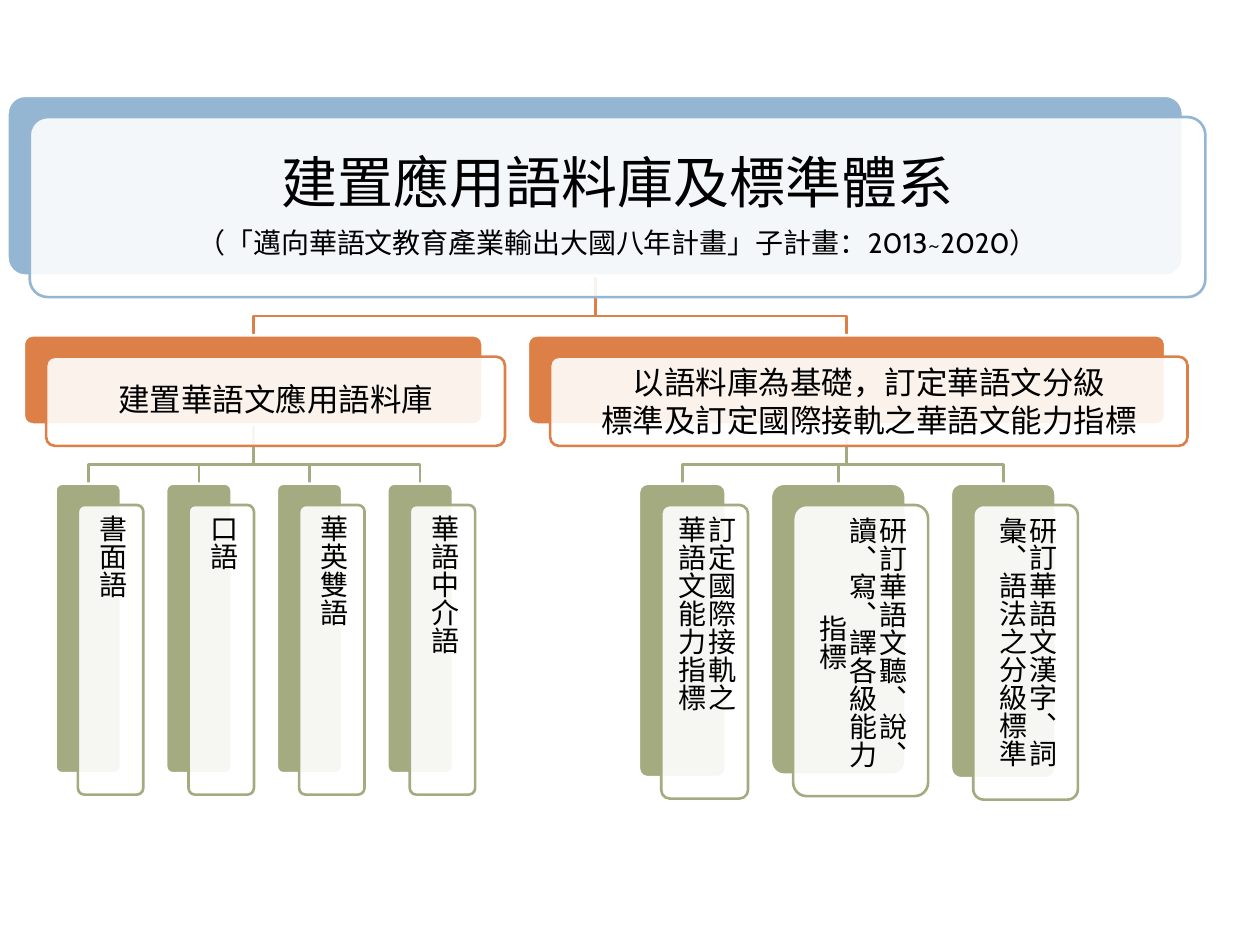
from lxml import etree
from pptx import Presentation
from pptx.dml.color import RGBColor
from pptx.enum.shapes import MSO_SHAPE
from pptx.enum.text import MSO_ANCHOR, MSO_AUTO_SIZE, PP_ALIGN
from pptx.oxml.ns import qn
from pptx.util import Cm, Pt

COLORS = {"plan": "94B6D2", "goal": "DD8047", "task": "A5AB81",
          "paper": "FFFFFF", "ink": "000000"}
SHIFT = (0.45, 0.43)      # front card relative to its backing, cm
GAP = 0.91                # between neighbouring backings, cm
DROP = 0.81               # from parent's edge to the branch line, cm
GOAL_TOP, TASK_TOP = 6.76, 9.75

TITLE = [("建置應用語料庫及標準體系", 32),
         ("（「邁向華語文教育產業輸出大國八年計畫」子計畫：2013~2020）", 16)]
# goal: width, lines, left of first task, tasks (width, height, lines)
GOALS = [
    (9.25, ["建置華語文應用語料庫"], 1.12,
     [(1.32, 5.84, [name]) for name in ("書面語", "口語", "華英雙語", "華語中介語")]),
    (12.85, ["以語料庫為基礎，訂定華語文分級", "標準及訂定國際接軌之華語文能力指標"], 12.88,
     [(1.75, 5.92, ["訂定國際接軌之", "華語文能力指標"]),
      (2.72, 5.87, ["研訂華語文聽、說、讀、寫、譯各級能力指標"]),
      (2.11, 5.94, ["研訂華語文漢字、詞彙、語法之分級標準"])]),
]


def rgb(name):
    return RGBColor.from_string(COLORS[name])


def set_line(sp, color):
    sp.shadow.inherit = False
    sp.line.color.rgb = rgb(color)
    sp.line.width = Pt(1.5)


def write(tf, lines, inset, spacing=0.9, after=0):
    """Fill a text frame with centred (text, size) lines."""
    frame = {"word_wrap": True, "auto_size": MSO_AUTO_SIZE.NONE,
             "vertical_anchor": MSO_ANCHOR.MIDDLE}
    frame.update({f"margin_{side}": Cm(inset)
                  for side in ("left", "top", "right", "bottom")})
    for key, value in frame.items():
        setattr(tf, key, value)
    for i, (text, size) in enumerate(lines):
        p = tf.add_paragraph() if i else tf.paragraphs[0]
        for key, value in {"alignment": PP_ALIGN.CENTER, "line_spacing": spacing,
                           "space_before": Pt(0), "space_after": Pt(after)}.items():
            setattr(p, key, value)
        r = p.add_run()
        r.text = text
        r.font.name, r.font.size = "Cabin", Pt(size)
        r.font.color.rgb = rgb("ink")


def add_card(s, box, color):
    """Draw a coloured backing and a translucent front card; return the front."""
    left, top, width, height = box
    for dx, dy, fill, line in ((0, 0, color, "paper"), (*SHIFT, "paper", color)):
        sp = s.shapes.add_shape(MSO_SHAPE.ROUNDED_RECTANGLE, Cm(left + dx),
                                Cm(top + dy), Cm(width), Cm(height))
        sp.adjustments[0] = 0.1
        sp.fill.solid()
        sp.fill.fore_color.rgb = rgb(fill)
        set_line(sp, line)
    clr = sp.fill._xPr.find(qn("a:solidFill"))[0]
    etree.SubElement(clr, qn("a:alpha")).set("val", "90000")
    return sp


def add_branches(s, parent, children, color):
    """Join the bottom of the parent box to the top of each child box."""
    left, top, width, height = parent
    x, y = left + width / 2, top + height
    for c_left, c_top, c_width, _ in children:
        c_x = c_left + c_width / 2
        fb = s.shapes.build_freeform(Cm(x), Cm(y))
        fb.add_line_segments([(Cm(x), Cm(y + DROP)), (Cm(c_x), Cm(y + DROP)),
                              (Cm(c_x), Cm(c_top))], close=False)
        sp = fb.convert_to_shape()
        sp.fill.background()
        set_line(sp, color)


def row_boxes(left, top, sizes):
    """Boxes side by side for the given (width, height) pairs."""
    boxes = []
    for width, height in sizes:
        boxes.append((left, top, width, height))
        left += width + GAP
    return boxes


def add_plan(s, box):
    front = add_card(s, box, "plan")
    title = s.shapes.title
    for key in ("left", "top", "width", "height"):
        setattr(title, key, getattr(front, key))
    write(title.text_frame, TITLE, 0.46, after=8)
    front._element.addnext(title._element)


def add_goal(s, box, lines, task_left, tasks):
    boxes = row_boxes(task_left, TASK_TOP, [task[:2] for task in tasks])
    add_branches(s, box, boxes, "task")
    front = add_card(s, box, "goal")
    write(front.text_frame, [(t, 18) for t in lines], 0.2,
          spacing=1.0 if len(lines) > 1 else 0.9)
    for task_box, (_, _, words) in zip(boxes, tasks):
        tf = add_card(s, task_box, "task").text_frame
        write(tf, [(t, 16) for t in words], 0.17)
        tf._txBody.bodyPr.set("vert", "eaVert")


def main():
    prs = Presentation()
    prs.slide_width, prs.slide_height = Cm(25.4), Cm(19.05)
    s = prs.slides.add_slide(prs.slide_layouts[5])
    plan_box = (0.15, 1.93, 23.7, 3.63)
    goal_boxes = row_boxes(0.48, GOAL_TOP, [(goal[0], 1.8) for goal in GOALS])
    add_branches(s, plan_box, goal_boxes, "goal")
    add_plan(s, plan_box)
    for box, (_, lines, task_left, tasks) in zip(goal_boxes, GOALS):
        add_goal(s, box, lines, task_left, tasks)
    prs.save("out.pptx")


if __name__ == "__main__":
    main()
